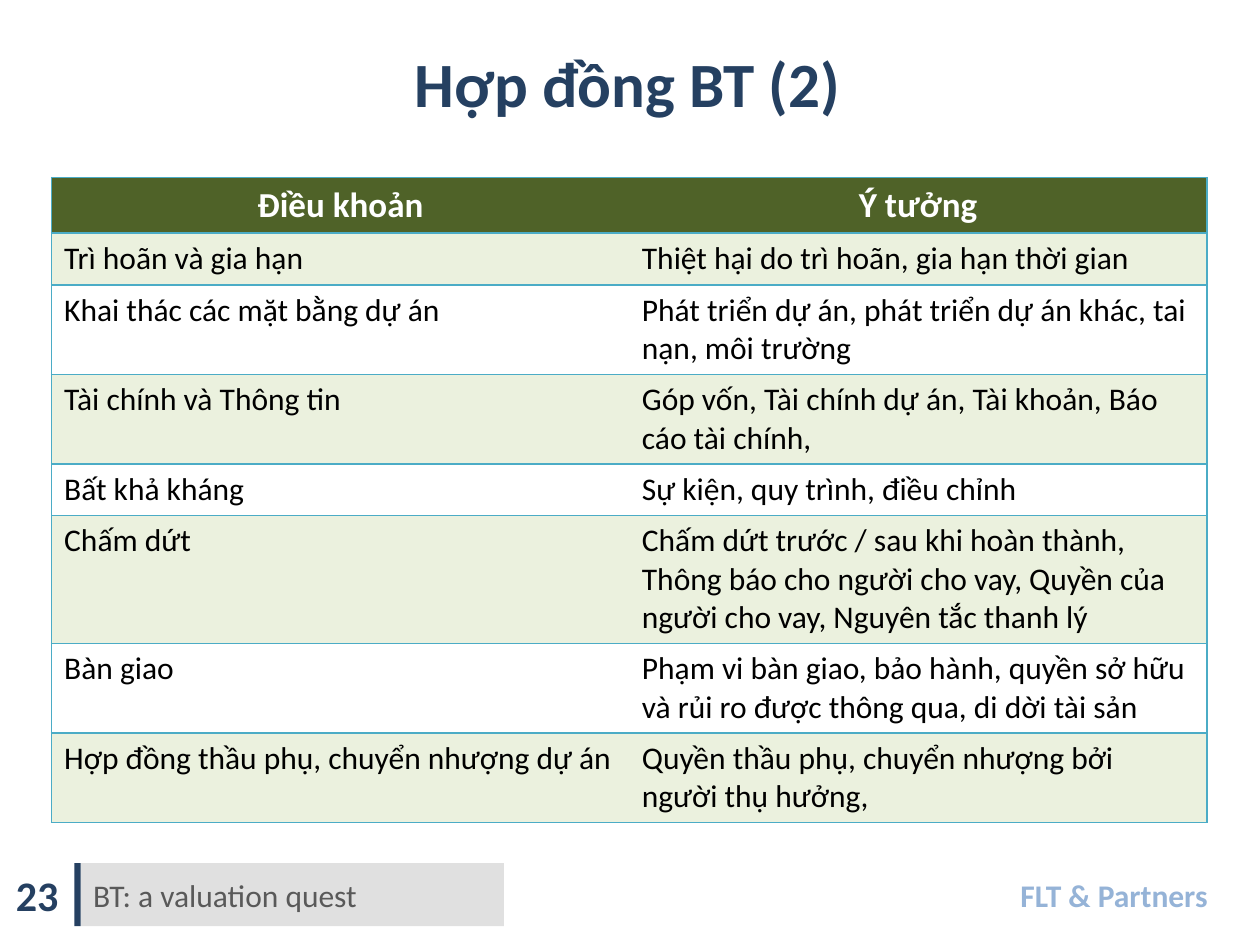
"""Build the slide "Hợp đồng BT (2)" with its table of contract terms."""
from lxml.etree import SubElement
from pptx import Presentation
from pptx.dml.color import RGBColor
from pptx.enum.shapes import MSO_SHAPE as Shape
from pptx.enum.text import MSO_ANCHOR as Anchor, PP_ALIGN as Align
from pptx.oxml import parse_xml
from pptx.oxml.ns import nsdecls, qn
from pptx.util import Inches, Pt

NAVY, OLIVE, PALE, WHITE = "254061", "4F6228", "EBF1DE", "FFFFFF"
BORDER = "4BACC6"
TERMS = [
    ("Điều khoản", "Ý tưởng"),
    ("Trì hoãn và gia hạn", "Thiệt hại do trì hoãn, gia hạn thời gian"),
    ("Khai thác các mặt bằng dự án",
     "Phát triển dự án, phát triển dự án khác, tai nạn, môi trường"),
    ("Tài chính và Thông tin",
     "Góp vốn, Tài chính dự án, Tài khoản, Báo cáo tài chính,"),
    ("Bất khả kháng", "Sự kiện, quy trình, điều chỉnh"),
    ("Chấm dứt",
     "Chấm dứt trước / sau khi hoàn thành, Thông báo cho người cho vay, "
     "Quyền của người cho vay, Nguyên tắc thanh lý"),
    ("Bàn giao",
     "Phạm vi bàn giao, bảo hành, quyền sở hữu và rủi ro được thông qua, "
     "di dời tài sản"),
    ("Hợp đồng thầu phụ, chuyển nhượng dự án",
     "Quyền thầu phụ, chuyển nhượng bởi người thụ hưởng,"),
]


def color(value):
    return RGBColor.from_string(value)


def write(frame, text, size=18, fill="000000", bold=False, align=Align.LEFT,
          anchor=Anchor.MIDDLE, wrap=True):
    frame.word_wrap = wrap
    frame.vertical_anchor = anchor
    para = frame.paragraphs[0]
    para.alignment = align
    span = para.add_run()
    span.text = text
    span.font.name = "Calibri"
    span.font.size = Pt(size)
    span.font.bold = bold
    span.font.color.rgb = color(fill)


deck = Presentation()
deck.slide_width, deck.slide_height = Inches(10), Inches(7.5)
page = deck.slides.add_slide(deck.slide_layouts[5])
shapes = page.shapes

title = shapes.title
title.left, title.top = Inches(3.17), Inches(0.3)
title.width, title.height = Inches(3.62), Inches(0.71)
write(title.text_frame, "Hợp đồng BT (2)", size=36, fill=NAVY, bold=True,
      align=Align.CENTER, wrap=False)

table = shapes.add_table(len(TERMS), 2, Inches(0.41), Inches(1.41),
                         Inches(9.17), Inches(0.41 * len(TERMS))).table
table.horz_banding = False
for row, terms in enumerate(TERMS):
    header = row == 0
    for column, text in enumerate(terms):
        cell = table.cell(row, column)
        write(cell.text_frame, text, size=20 if header else 18,
              fill=WHITE if header else "000000", bold=header,
              align=Align.CENTER if header else Align.LEFT, anchor=Anchor.TOP)
        cell.vertical_anchor = Anchor.TOP
        cell.fill.solid()
        cell.fill.fore_color.rgb = color(
            OLIVE if header else PALE if row % 2 else WHITE)
        inner_side = "L" if column else "R"
        properties = cell._tc.get_or_add_tcPr()
        for place, side in enumerate("LRTB"):
            paint = ("<a:noFill/>" if side == inner_side else
                     f'<a:solidFill><a:srgbClr val="{BORDER}"/></a:solidFill>')
            properties.insert(place, parse_xml(
                f'<a:ln{side} {nsdecls("a")} w="{Pt(1)}">{paint}</a:ln{side}>'))

footer_top, footer_height = Inches(6.85), Inches(0.5)
for left, width, fill, text in ((0.64, 3.36, "D9D9D9", "BT: a valuation quest"),
                                (0.59, 0.05, NAVY, None)):
    box = shapes.add_shape(Shape.RECTANGLE, Inches(left), footer_top,
                           Inches(width), footer_height)
    box.shadow.inherit = False
    box.fill.solid()
    box.fill.fore_color.rgb = color(fill)
    box.line.fill.background()
    if text:
        tint = box.fill._xPr.find(".//" + qn("a:srgbClr"))
        SubElement(tint, qn("a:alpha"), val="80000")
        write(box.text_frame, text, fill="595959")

for text, left, width, size, fill, align in (
        ("23", 0, 0.59, 24, NAVY, Align.CENTER),
        ("FLT & Partners", 8, 1.77, 18, "95B3D7", Align.LEFT)):
    box = shapes.add_textbox(Inches(left), footer_top, Inches(width), footer_height)
    write(box.text_frame, text, size=size, fill=fill, bold=True, align=align)

deck.save("out.pptx")
